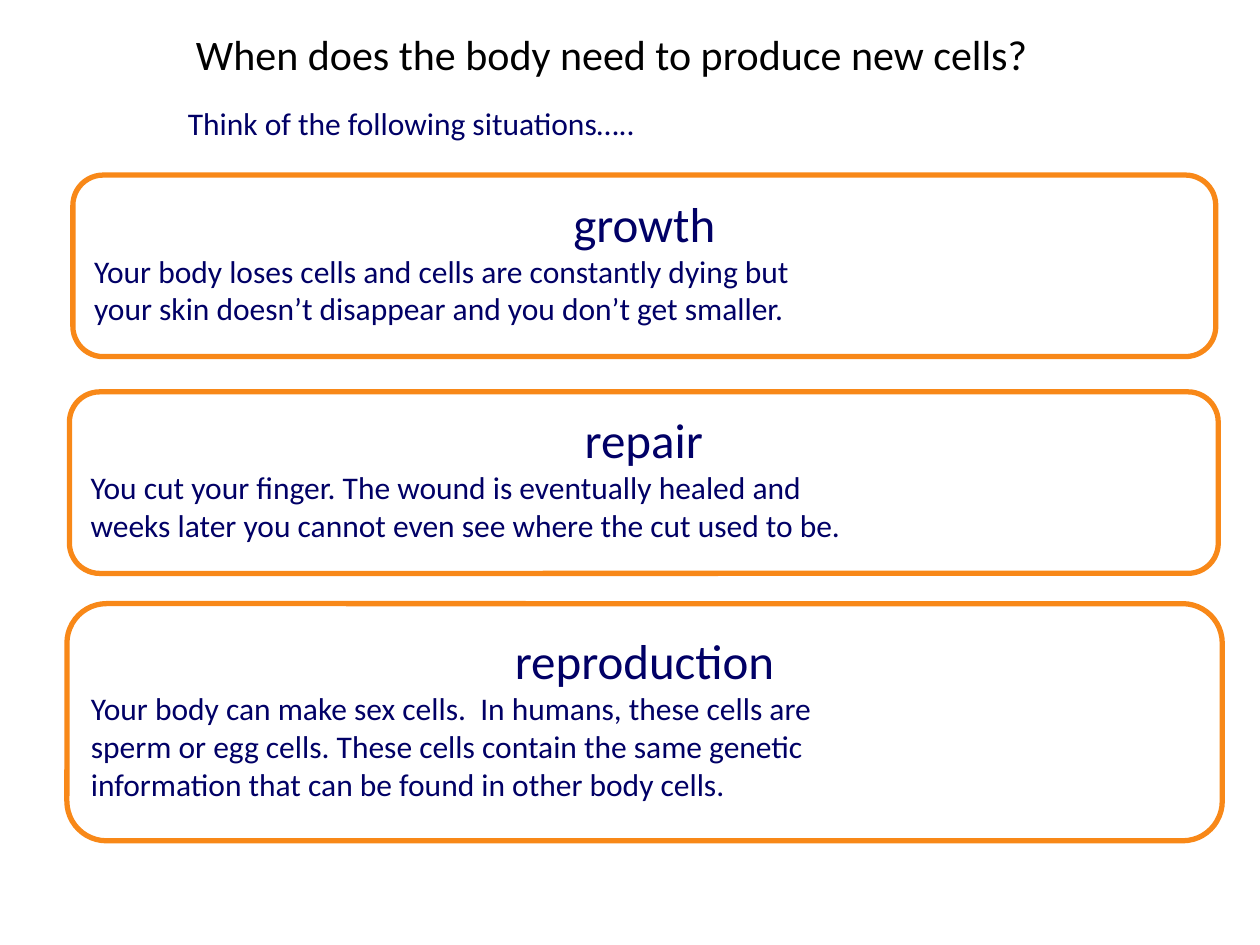
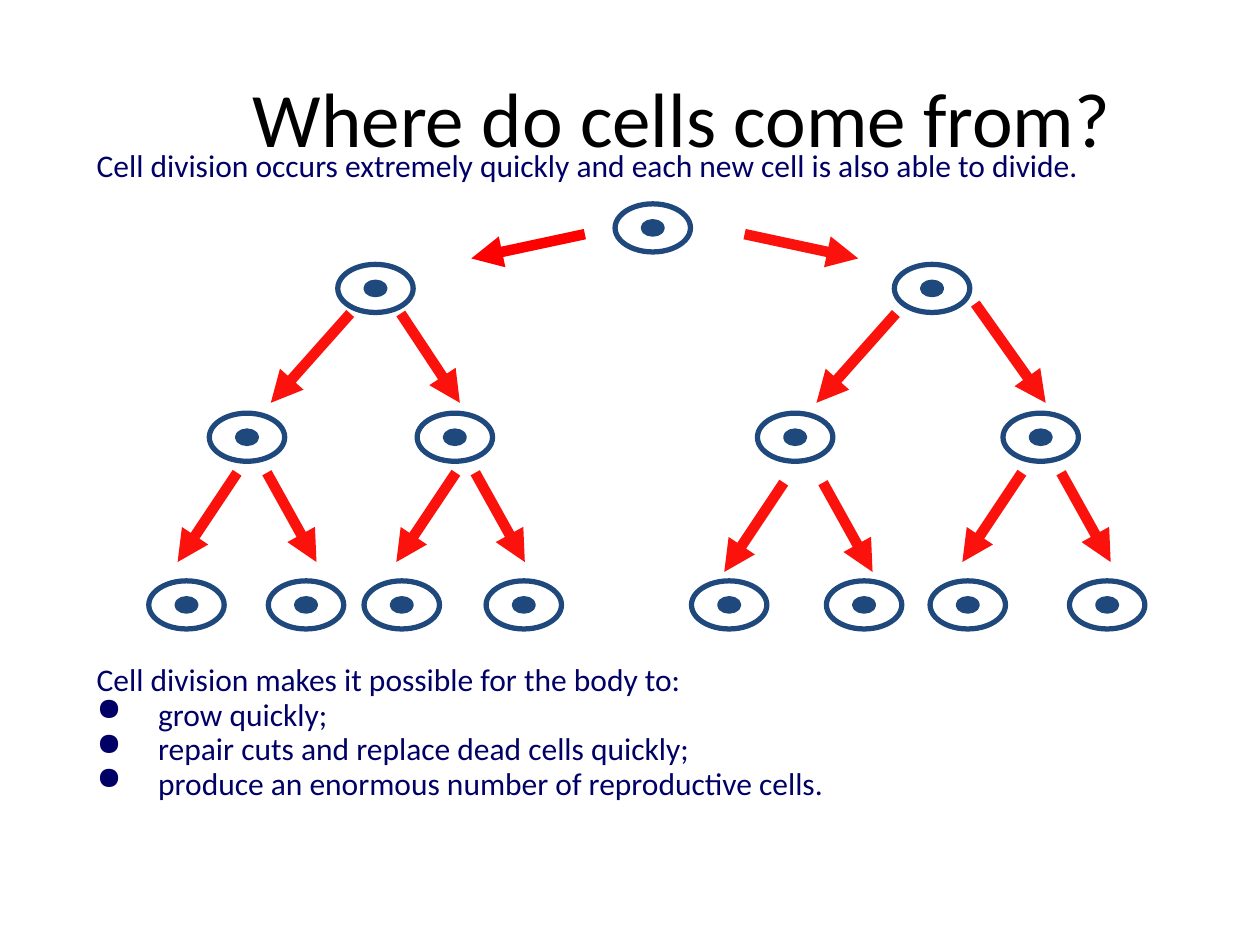
from lxml import etree
from pptx import Presentation
from pptx.dml.color import RGBColor
from pptx.enum.shapes import MSO_CONNECTOR, MSO_SHAPE
from pptx.enum.text import MSO_ANCHOR, MSO_AUTO_SIZE, PP_ALIGN
from pptx.oxml.ns import qn
from pptx.util import Cm, Pt

OVAL, ROUNDED, RECTANGLE = MSO_SHAPE.OVAL, MSO_SHAPE.ROUNDED_RECTANGLE, MSO_SHAPE.RECTANGLE
STRAIGHT = MSO_CONNECTOR.STRAIGHT
LEFT, CENTER = PP_ALIGN.LEFT, PP_ALIGN.CENTER
TOP, MIDDLE = MSO_ANCHOR.TOP, MSO_ANCHOR.MIDDLE
NO_FIT = MSO_AUTO_SIZE.NONE

BLACK = RGBColor(0x00, 0x00, 0x00)
WHITE = RGBColor(0xFF, 0xFF, 0xFF)
NAVY = RGBColor(0x01, 0x00, 0x66)
ORANGE = RGBColor(0xF8, 0x88, 0x18)
CELL_BLUE = RGBColor(0x1F, 0x49, 0x7D)
PURE_RED = RGBColor(0xFF, 0x00, 0x00)
ARROW_RED = RGBColor(0xFC, 0x12, 0x0C)

# Paragraph formats
HEADING = {"alignment": CENTER, "line_spacing": 0.8}
BODY = {"alignment": LEFT}
SPACED = {"alignment": LEFT, "space_before": Pt(9)}
TIGHT = {**SPACED, "line_spacing": 0.5}


def write(box, lines, color=NAVY, anchor=MIDDLE, wrap=True):
    """Fill a box with lines given as (text, size, paragraph format)."""
    frame = box.text_frame
    frame.auto_size = NO_FIT
    frame.word_wrap = wrap
    frame.vertical_anchor = anchor
    for number, (text, size, layout) in enumerate(lines):
        para = frame.paragraphs[0] if number == 0 else frame.add_paragraph()
        for name, value in layout.items():
            setattr(para, name, value)
        span = para.add_run()
        span.text = text
        for name, value in {"name": "Calibri", "size": Pt(size)}.items():
            setattr(span.font, name, value)
        span.font.color.rgb = color


def add_outlined(shapes, kind, place, line_color, fill_color=None):
    """Add a preset shape with a 3 pt outline; place is in centimetres."""
    box = shapes.add_shape(kind, *map(Cm, place))
    box.shadow.inherit = False
    box.line.color.rgb = line_color
    box.line.width = Pt(3)
    if fill_color is None:
        box.fill.background()
    else:
        box.fill.solid()
        box.fill.fore_color.rgb = fill_color
    return box


deck = Presentation()
deck.slide_width, deck.slide_height = Cm(25.4), Cm(19.05)

# Both pages with their titles, each shifted right by a wider left margin
TITLES = [
    ("When does the body need to produce new cells?", 24, (0.71, 0.33, 22.1, 1.52), 1.4),
    ("Where do cells come from?", 44, (1.27, 0.76, 22.86, 3.18), 2.36),
]
for text, size, place, margin in TITLES:
    page = deck.slides.add_slide(deck.slide_layouts[5])
    title = page.shapes.title
    title.left, title.top, title.width, title.height = map(Cm, place)
    title.text_frame.margin_left = Cm(margin)
    write(title, [(text, size, {"alignment": CENTER})], BLACK)
situations, division = deck.slides

# Slide 1: intro and three framed situations
intro = situations.shapes.add_textbox(Cm(1.5), Cm(1.85), Cm(13.59), Cm(1.27))
write(intro, [("Think of the following situations…..", 18, {**SPACED, "alignment": CENTER})],
      wrap=False)

FRAMES = [
    ((1.47, 3.53, 23.04, 3.66), "growth", [
        "Your body loses cells and cells are constantly dying but",
        "your skin doesn’t disappear and you don’t get smaller."]),
    ((1.4, 7.9, 23.16, 3.66), "repair", [
        "You cut your finger. The wound is eventually healed and",
        "weeks later you cannot even see where the cut used to be."]),
    ((1.35, 12.17, 23.29, 4.78), "reproduction", [
        "Your body can make sex cells.  In humans, these cells are",
        "sperm or egg cells. These cells contain the same genetic",
        "information that can be found in other body cells."]),
]
for place, heading, sentences in FRAMES:
    frame_box = add_outlined(situations.shapes, ROUNDED, place, ORANGE)
    write(frame_box, [(heading, 28, HEADING)] + [(line, 18, BODY) for line in sentences])

# Slide 2: arrows as (x, y, dx, dy) in centimetres
first_arrows = [(11.79, 4.72, -2.29, 0.49), (15.01, 4.72, 2.29, 0.49)]
later_arrows = [
    (7.06, 6.32, -1.6, 1.8), (8.08, 6.32, 1.19, 1.8),
    (18.06, 6.32, -1.6, 1.8), (19.66, 6.12, 1.42, 2.0),
]
for x, y in [(4.78, 9.53), (9.19, 9.53), (15.8, 9.73), (20.6, 9.53)]:
    gap = 0.39 if x == 9.19 else 0.6 if x == 4.78 else 0.79
    later_arrows += [(x, y, -1.2, 1.8), (x + gap, y, 1.0, 1.8)]

for number, (x, y, dx, dy) in enumerate(first_arrows + later_arrows):
    # The sentence frame and the title lie above the first two arrows
    if number == len(first_arrows):
        sentence = add_outlined(division.shapes, RECTANGLE, (1.7, 2.13, 22.2, 2.39), WHITE)
        write(sentence, [("Cell division occurs extremely quickly and each new cell "
                          "is also able to divide.", 18, SPACED)])
        title = division.shapes.title.element
        title.getparent().append(title)
    arrow = division.shapes.add_connector(STRAIGHT, Cm(x), Cm(y), Cm(x + dx), Cm(y + dy))
    arrow.line.color.rgb = PURE_RED if number == 0 else ARROW_RED
    arrow.line.width = Pt(6)
    properties = arrow.element.spPr
    etree.SubElement(properties.find(qn("a:ln")), qn("a:tailEnd"), type="triangle")
    etree.SubElement(properties, qn("a:effectLst"))

# Four generations of cells: top of the row and left edges
CELL_W, CELL_H = 1.52, 0.97
NUCLEUS_W, NUCLEUS_H = 0.38, 0.25
GENERATIONS = [
    (4.11, [12.4]),
    (5.33, [6.81, 18.03]),
    (8.33, [4.22, 8.41, 15.27, 20.22]),
    (11.71, [3.0, 5.41, 7.34, 9.8, 13.94, 16.66, 18.75, 21.56]),
]
for top, lefts in GENERATIONS:
    for left in lefts:
        cell = division.shapes.add_group_shape()
        for width, height, fill in [(CELL_W, CELL_H, WHITE), (NUCLEUS_W, NUCLEUS_H, CELL_BLUE)]:
            place = (left + (CELL_W - width) / 2, top + (CELL_H - height) / 2, width, height)
            add_outlined(cell.shapes, OVAL, place, CELL_BLUE, fill)

# Closing list
closing = division.shapes.add_textbox(Cm(1.7), Cm(13.51), Cm(21.79), Cm(3.81))
write(closing, [(line, 18, TIGHT) for line in [
    "Cell division makes it possible for the body to:",
    "grow quickly;",
    "repair cuts and replace dead cells quickly;",
    "produce an enormous number of reproductive cells.",
]], anchor=TOP)
for para in closing.text_frame.paragraphs[1:]:
    settings = para._p.get_or_add_pPr()
    settings.set("marL", str(Cm(1.24)))
    settings.set("indent", str(-Cm(1.24)))
    etree.SubElement(settings, qn("a:buChar"), char="●")

deck.save("out.pptx")
